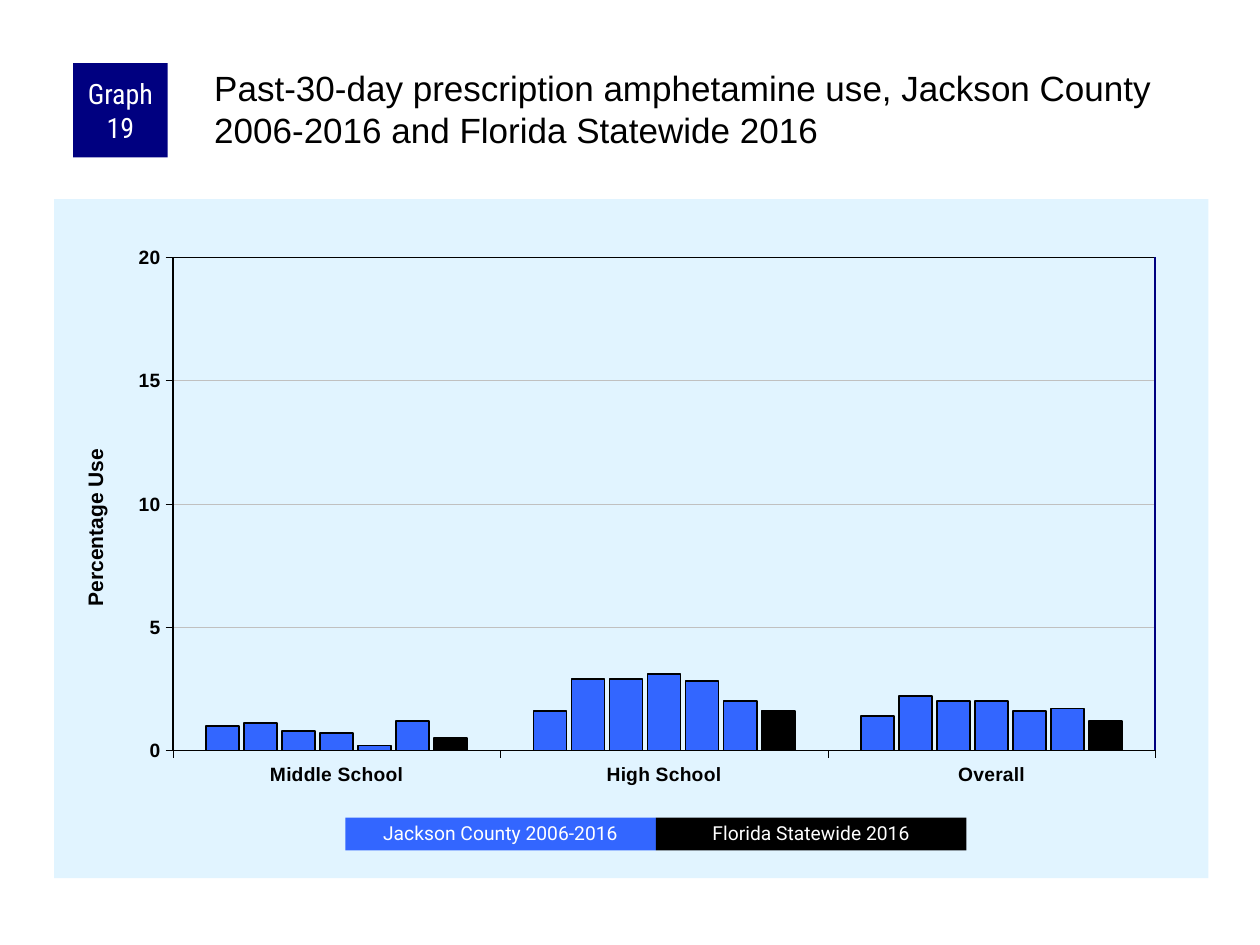
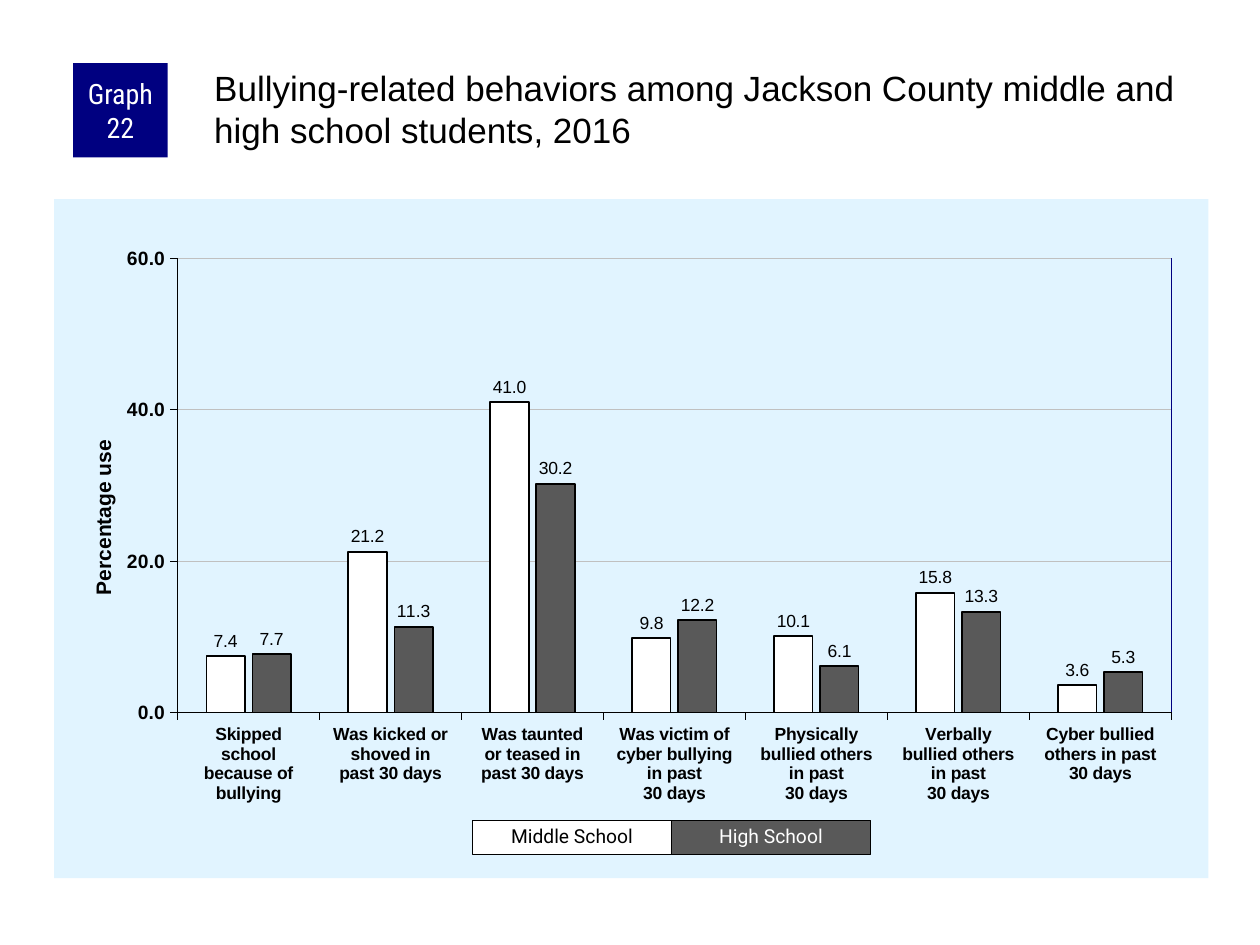
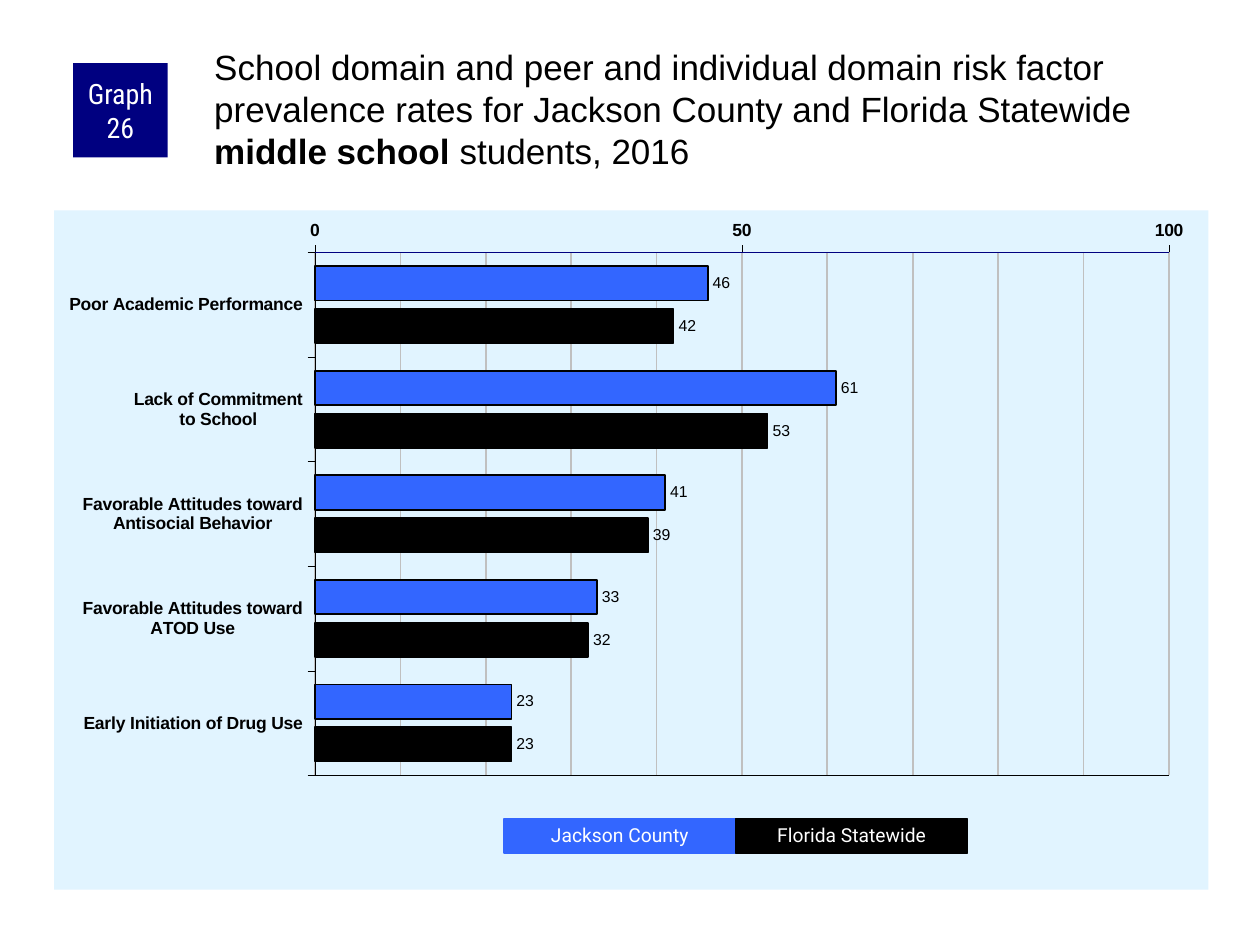
from lxml import etree
from pptx import Presentation
from pptx.chart.data import CategoryChartData
from pptx.dml.color import RGBColor
from pptx.enum import chart as ce, shapes, text as te
from pptx.oxml import parse_xml
from pptx.oxml.ns import nsdecls, qn
from pptx.util import Inches, Pt

BLUE, NAVY, BLACK, WHITE = "3366FF", "000080", "000000", "FFFFFF"
GREY, SILVER, SKY = "595959", "C0C0C0", "E1F4FF"
COLUMN = ce.XL_CHART_TYPE.COLUMN_CLUSTERED
BAR = ce.XL_CHART_TYPE.BAR_CLUSTERED
LEFT, WIDTH, HEIGHT = 0.43, 9.16, 5.39

# Legend keys: label, fill, font colour, line colour.
# Edges: side of the plot, colour of the rule along it.
GRAPHS = [
    dict(
        number=19, title_top=0.5, top=1.58, kind=COLUMN,
        title=["Past-30-day prescription amphetamine use, Jackson County "
               "2006-2016 and Florida Statewide 2016"],
        cats=["Middle School", "High School", "Overall"],
        rows=[(BLUE, [1, 1.6, 1.4]), (BLUE, [1.1, 2.9, 2.2]),
              (BLUE, [0.8, 2.9, 2]), (BLUE, [0.7, 3.1, 2]),
              (BLUE, [0.2, 2.8, 1.6]), (BLUE, [1.2, 2, 1.7]),
              (BLACK, [0.5, 1.6, 1.2])],
        gap=200, overlap=-15, plot=(0.103, 0.086, 0.851, 0.726),
        axis="Percentage Use", axis_at=(0.021, 0.362), sizes=(11, 11),
        top_value=20, major=5, grid=0.25, form="General", label=None,
        edges=[("left", BLACK), ("top", BLACK), ("right", NAVY)],
        legend=(2.74, 6.49, 2.465, 0.26),
        keys=[("Jackson County 2006-2016", BLUE, WHITE, None),
              ("Florida Statewide 2016", BLACK, WHITE, None)]),
    dict(
        number=22, title_top=0.5, top=1.58, kind=COLUMN,
        title=["Bullying-related behaviors among Jackson County middle and "
               "high school students, 2016"],
        cats=["Skipped\nschool\nbecause of\nbullying",
              "Was kicked or\nshoved in\npast 30 days",
              "Was taunted\nor teased in\npast 30 days",
              "Was victim of\ncyber bullying\nin past\n30 days",
              "Physically\nbullied others\nin past\n30 days",
              "Verbally\nbullied others\nin past\n30 days",
              "Cyber bullied\nothers in past\n30 days"],
        rows=[(WHITE, [7.4, 21.2, 41, 9.8, 10.1, 15.8, 3.6]),
              (GREY, [7.7, 11.3, 30.2, 12.2, 6.1, 13.3, 5.3])],
        gap=150, overlap=-20, plot=(0.107, 0.087, 0.861, 0.669),
        axis="Percentage use", axis_at=(0.028, 0.349), sizes=(10, 11),
        top_value=60, major=20, grid=0.25, form="0.0", label=10,
        edges=[("right", NAVY)],
        legend=(3.75, 6.51, 1.58, 0.27),
        keys=[("Middle School", WHITE, BLACK, BLACK),
              ("High School", GREY, WHITE, BLACK)]),
    dict(
        number=26, title_top=0.33, top=1.67, kind=BAR,
        title=["School domain and peer and individual domain risk factor "
               "prevalence rates for Jackson County and Florida Statewide ",
               "middle school", " students, 2016"],
        cats=["Poor Academic Performance", "Lack of Commitment\nto School",
              "Favorable Attitudes toward\nAntisocial Behavior",
              "Favorable Attitudes toward\nATOD Use",
              "Early Initiation of Drug Use"],
        rows=[(BLUE, [46, 61, 41, 33, 23]), (BLACK, [42, 53, 39, 32, 23])],
        gap=80, overlap=-25, plot=(0.226, 0.062, 0.74, 0.77),
        axis=None, sizes=(10, 10),
        top_value=100, major=50, minor=10, grid=1, form="General", label=9,
        edges=[("top", NAVY), ("bottom", BLACK)],
        legend=(4, 6.5, 1.84, 0.27),
        keys=[("Jackson County", BLUE, WHITE, BLUE),
              ("Florida Statewide", BLACK, WHITE, BLACK)]),
]


def rgb(code):
    return RGBColor.from_string(code)


def style(font, size, color=BLACK, bold=False, face="Arial"):
    font.size, font.bold, font.name = Pt(size), bold, face
    font.color.rgb = rgb(color)


def stroke(line, color, width):
    line.color.rgb, line.width = rgb(color), Pt(width)


def write(shape, runs, inset=(0, 0, 0, 0), anchor=te.MSO_ANCHOR.TOP,
          align=te.PP_ALIGN.LEFT, space=None, **look):
    """Fill a shape with one paragraph; every second run is bold."""
    frame = shape.text_frame
    frame.word_wrap, frame.vertical_anchor = True, anchor
    (frame.margin_left, frame.margin_top,
     frame.margin_right, frame.margin_bottom) = map(Inches, inset)
    para = frame.paragraphs[0]
    para.alignment, para.line_spacing = align, space
    for i, words in enumerate(runs):
        run = para.add_run()
        run.text = words
        style(run.font, bold=i % 2 == 1, **look)


def box(slide, place, words, fill, line=None, **look):
    shape = slide.shapes.add_shape(shapes.MSO_SHAPE.RECTANGLE,
                                   *map(Inches, place))
    shape.shadow.inherit = False
    shape.fill.solid()
    shape.fill.fore_color.rgb = rgb(fill)
    if line:
        stroke(shape.line, line, 0.75)
    else:
        shape.line.fill.background()
    write(shape, [words], anchor=te.MSO_ANCHOR.MIDDLE,
          align=te.PP_ALIGN.CENTER, **look)


def fix(parent, index, **parts):
    """Give a chart part a manual layout."""
    old = parent.find(qn("c:layout"))
    if old is not None:
        parent.remove(old)
    body = "".join(f'<c:{k} val="{v}"/>' for k, v in parts.items())
    parent.insert(index, parse_xml(
        f'<c:layout {nsdecls("c")}><c:manualLayout>{body}'
        '</c:manualLayout></c:layout>'))


def paint(chart, fill):
    root = chart.element
    root.find(qn("c:chart")).addnext(parse_xml(
        f'<c:spPr {nsdecls("c", "a")}><a:solidFill><a:srgbClr val="{fill}"/>'
        '</a:solidFill><a:ln><a:noFill/></a:ln></c:spPr>'))


def add_minor(chart, unit, color, width):
    """Draw minor gridlines across the value axis."""
    chart.value_axis.minor_unit = unit
    chart.value_axis.has_minor_gridlines = True
    lines = chart.element.find(".//" + qn("c:minorGridlines"))
    lines.append(parse_xml(
        f'<c:spPr {nsdecls("c", "a")}><a:ln w="{Pt(width)}"><a:solidFill>'
        f'<a:srgbClr val="{color}"/></a:solidFill></a:ln></c:spPr>'))


def set_axes(chart, g):
    cat, val = chart.category_axis, chart.value_axis
    for axis, size in zip((cat, val), g["sizes"]):
        style(axis.tick_labels.font, size, bold=True)
        stroke(axis.format.line, BLACK, 0.25)
        axis.major_tick_mark = ce.XL_TICK_MARK.OUTSIDE
        axis.minor_tick_mark = ce.XL_TICK_MARK.NONE
    val.minimum_scale, val.maximum_scale = 0, g["top_value"]
    val.major_unit = g["major"]
    val.tick_labels.number_format = g["form"]
    val.tick_labels.number_format_is_linked = False
    stroke(val.major_gridlines.format.line, SILVER, g["grid"])
    if "minor" in g:
        add_minor(chart, g["minor"], SILVER, g["grid"])
    if g["kind"] == BAR:
        cat.reverse_order = True
        cat.crosses = ce.XL_AXIS_CROSSES.MAXIMUM
    if g["axis"]:
        title = val.axis_title
        title.text_frame.text = g["axis"]
        style(title.text_frame.paragraphs[0].runs[0].font, 12, bold=True)
        x, y = g["axis_at"]
        fix(chart.element.find(".//" + qn("c:valAx") + "/" + qn("c:title")),
            1, xMode="edge", yMode="edge", x=x, y=y)


def add_graph(slide, g):
    data = CategoryChartData(number_format=g["form"])
    data.categories = g["cats"]
    for i, (_, values) in enumerate(g["rows"], 1):
        data.add_series(f"Series {i}", values)
    place = map(Inches, (LEFT, g["top"], WIDTH, HEIGHT))
    chart = slide.shapes.add_chart(g["kind"], *place, data).chart
    chart.has_legend = chart.has_title = False
    style(chart.font, 10)
    paint(chart, SKY)
    x, y, w, h = g["plot"]
    fix(chart.element.find(".//" + qn("c:plotArea")), 0, layoutTarget="inner",
        xMode="edge", yMode="edge", x=x, y=y, w=w, h=h)
    set_axes(chart, g)
    plot = chart.plots[0]
    plot.gap_width, plot.overlap = g["gap"], g["overlap"]
    plot.vary_by_categories = False
    for series, (color, _) in zip(plot.series, g["rows"]):
        series.invert_if_negative = False
        series.format.fill.solid()
        series.format.fill.fore_color.rgb = rgb(color)
        stroke(series.format.line, BLACK, 1)
        if g["label"]:
            labels = series.data_labels
            labels.show_value = True
            labels.position = ce.XL_LABEL_POSITION.OUTSIDE_END
            labels.number_format = g["form"]
            labels.number_format_is_linked = False
            style(labels.font, g["label"])


def add_edges(slide, g):
    """Rule the sides of the plot."""
    x, y, w, h = g["plot"]
    x1, y1 = LEFT + x * WIDTH, g["top"] + y * HEIGHT
    x2, y2 = x1 + w * WIDTH, y1 + h * HEIGHT
    sides = dict(left=(x1, y1, x1, y2), right=(x2, y1, x2, y2),
                 top=(x1, y1, x2, y1), bottom=(x1, y2, x2, y2))
    for side, color in g["edges"]:
        rule = slide.shapes.add_connector(shapes.MSO_CONNECTOR.STRAIGHT,
                                          *map(Inches, sides[side]))
        stroke(rule.line, color, 1)
        etree.SubElement(rule.element.spPr, qn("a:effectLst"))


def add_slide(deck, g):
    slide = deck.slides.add_slide(deck.slide_layouts[6])
    add_graph(slide, g)
    add_edges(slide, g)
    box(slide, (0.58, 0.5, 0.75, 0.75), f"Graph {g['number']}", NAVY,
        inset=(0.05, 0, 0.05, 0), size=16, color=WHITE,
        face="Roboto Condensed")
    title = slide.shapes.add_textbox(
        *map(Inches, (1.67, g["title_top"], 7.92, 0.83)))
    write(title, g["title"], inset=(0.03, 0.03, 0, 0), size=20)
    x, y, w, h = g["legend"]
    for i, (words, fill, color, line) in enumerate(g["keys"]):
        box(slide, (x + i * w, y, w, h), words, fill, line, space=0.9,
            size=11, color=color, face="Roboto")


def main():
    deck = Presentation()
    deck.slide_width, deck.slide_height = Inches(10), Inches(7.5)
    for g in GRAPHS:
        add_slide(deck, g)
    deck.save("out.pptx")


if __name__ == "__main__":
    main()
